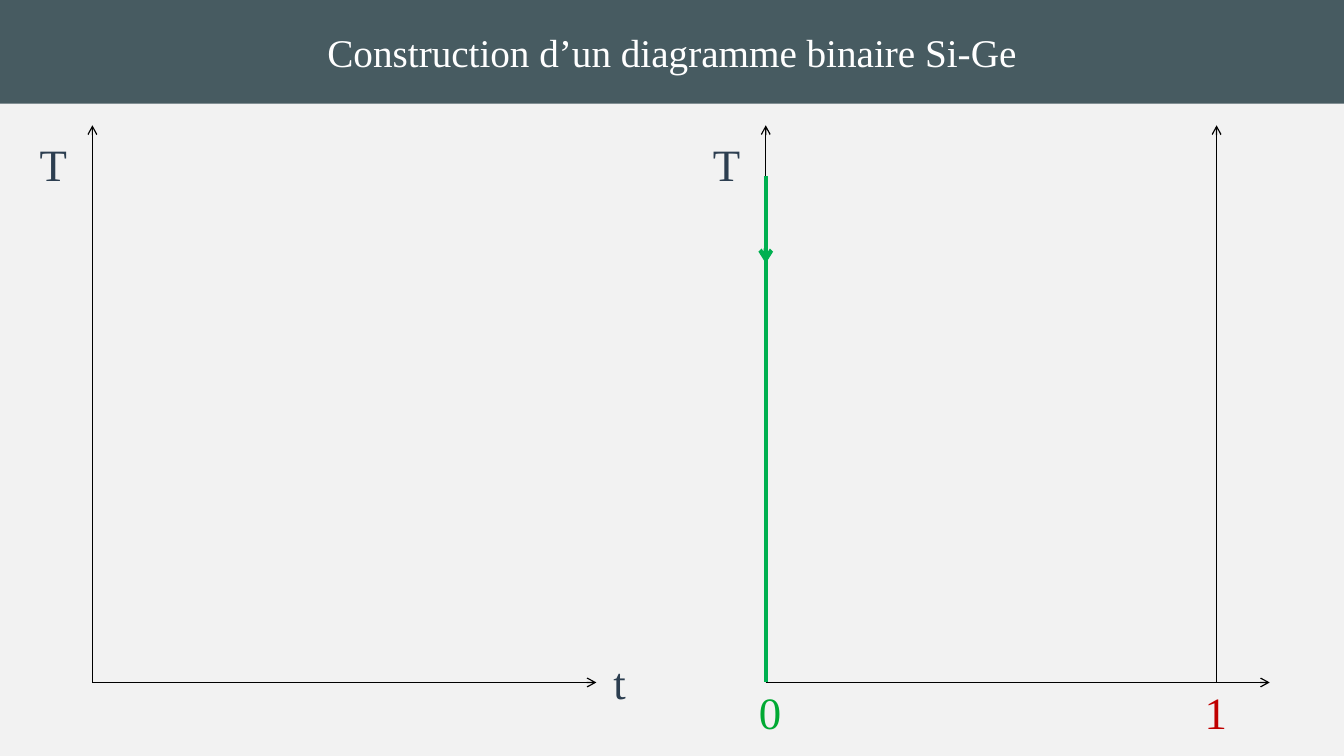
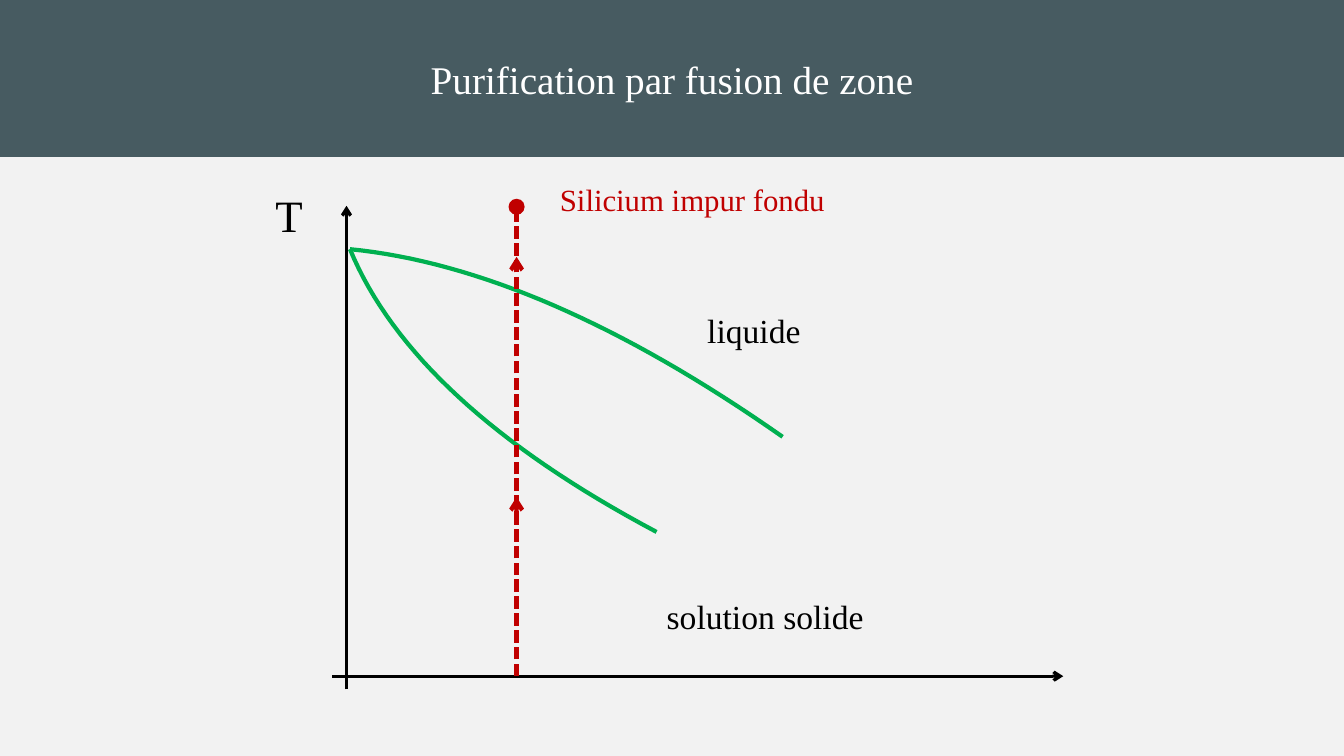
import pptx
import pptx.util
import pptx.dml.color
import pptx.enum.dml
import pptx.enum.shapes
import pptx.enum.text
import pptx.oxml
import pptx.oxml.ns

Pt = pptx.util.Pt
SHAPE = pptx.enum.shapes.MSO_SHAPE
WIDE, HIGH = 960, 540
FONT = "Times New Roman"
COLORS = {
    "page": "F2F2F2",
    "band": "475B61",
    "white": "FFFFFF",
    "black": "000000",
    "navy": "2C3E50",
    "green": "00B050",
    "zero": "00A933",
    "red": "C00000",
}


def color(name):
    return pptx.dml.color.RGBColor.from_string(COLORS[name])


def write(shape, text, size, tone):
    frame = shape.text_frame
    frame.text = text
    frame.vertical_anchor = pptx.enum.text.MSO_ANCHOR.MIDDLE
    line = frame.paragraphs[0]
    line.alignment = pptx.enum.text.PP_ALIGN.CENTER
    font = line.runs[0].font
    font.name, font.size = FONT, Pt(size)
    font.color.rgb = color(tone)


def label(slide, text, left, top, width, height, size, tone):
    box = slide.shapes.add_textbox(Pt(left), Pt(top), Pt(width), Pt(height))
    box.text_frame.word_wrap = False
    write(box, text, size, tone)


def solid(slide, kind, left, top, width, height, tone):
    shape = slide.shapes.add_shape(kind, Pt(left), Pt(top), Pt(width), Pt(height))
    shape.shadow.inherit = False
    shape.fill.solid()
    shape.fill.fore_color.rgb = color(tone)
    shape.line.fill.background()
    return shape


def stroke(slide, start, end, tone, weight, arrow=False, dash=None):
    kind = pptx.enum.shapes.MSO_CONNECTOR.STRAIGHT
    line = slide.shapes.add_connector(kind, *map(Pt, start + end))
    line.line.color.rgb = color(tone)
    line.line.width = Pt(weight)
    if dash:
        line.line.dash_style = dash
    if arrow:
        tail = pptx.oxml.parse_xml(
            f'<a:tailEnd {pptx.oxml.ns.nsdecls("a")} type="arrow"/>')
        line.line._get_or_add_ln().append(tail)
    line._element.spPr.append(
        pptx.oxml.parse_xml(f'<a:effectLst {pptx.oxml.ns.nsdecls("a")}/>'))


def curve(slide, start, bend, end, tone, weight, steps=32):
    spots = []
    for step in range(steps + 1):
        t = step / steps
        spots.append(tuple(
            Pt((1 - t) ** 2 * a + 2 * t * (1 - t) * b + t * t * c)
            for a, b, c in zip(start, bend, end)))
    path = slide.shapes.build_freeform(*spots[0], scale=1.0)
    path.add_line_segments(spots[1:], close=False)
    shape = path.convert_to_shape()
    shape.shadow.inherit = False
    shape.fill.background()
    shape.line.color.rgb = color(tone)
    shape.line.width = Pt(weight)


def page(deck, title, height):
    slide = deck.slides.add_slide(deck.slide_layouts[6])
    band = solid(slide, SHAPE.RECTANGLE, 0, 0, WIDE, height, "band")
    write(band, title, 28, "white")
    return slide


def axes(slide, left, top, width, height):
    base = top + height
    stroke(slide, (left, base), (left, top), "black", 0.85, True)
    stroke(slide, (left, base), (left + width, base), "black", 0.85, True)
    label(slide, "T", left - 46.5, top + 4, 37, 46, 32, "navy")


def cooling(slide, left, top, width, height):
    axes(slide, left, top, width, height)
    label(slide, "t", left + width + 3, top + height - 23.5, 27, 46, 32, "navy")


def binary(slide, left, top, width, height):
    axes(slide, left, top, width, height)
    base, right = top + height, left + 322
    stroke(slide, (right, base), (right, top), "black", 0.85, True)
    label(slide, "0", left - 13.5, base - 2, 33, 46, 32, "zero")
    label(slide, "1", right - 17, base - 2, 33, 46, 32, "red")
    stroke(slide, (left, top + 36.5), (left, base), "green", 3)
    stroke(slide, (left, top + 36.5), (left, top + 98.5), "green", 3, True)


def zone(slide, left, top, width, height):
    base, mid = top + height, left + 121.5
    stroke(slide, (left, base + 9.5), (left, top), "black", 2.25, True)
    stroke(slide, (left - 10, base), (left + width, base), "black", 2.25, True)
    peak = (left + 2.5, top + 31)
    curve(slide, peak, (left + 139.5, top + 44.5),
          (left + 311.5, top + 165), "green", 3)
    curve(slide, peak, (left + 48, top + 141),
          (left + 221.5, top + 233), "green", 3)
    label(slide, "T", left - 58.5, top - 16.5, 35, 46, 32, "black")
    label(slide, "liquide", left + 250.5, top + 71, 81, 36, 24, "black")
    label(slide, "solution solide", left + 221, top + 275, 156, 36, 24, "black")
    label(slide, "Silicium impur fondu", left + 144, top - 21.5, 206, 34, 22, "red")
    dash = pptx.enum.dml.MSO_LINE.SQUARE_DOT
    stroke(slide, (mid, base), (mid, top), "red", 3, dash=dash)
    solid(slide, SHAPE.OVAL, mid - 5.75, top - 5, 11.5, 11.5, "red")
    for tip in (208, 36.5):
        stroke(slide, (mid, top + tip + 11), (mid, top + tip), "red", 3, True)


def main():
    deck = pptx.Presentation()
    deck.slide_width, deck.slide_height = Pt(WIDE), Pt(HIGH)
    back = deck.slide_master.background.fill
    back.solid()
    back.fore_color.rgb = color("page")

    slide = page(deck, "Construction d’un diagramme binaire Si-Ge", 74)
    cooling(slide, 66, 89.5, 360, 398)
    binary(slide, 547, 89.5, 360, 398)

    slide = page(deck, "Purification par fusion de zone", 112)
    zone(slide, 247.5, 147, 512, 336)

    deck.save("out.pptx")


if __name__ == "__main__":
    main()
